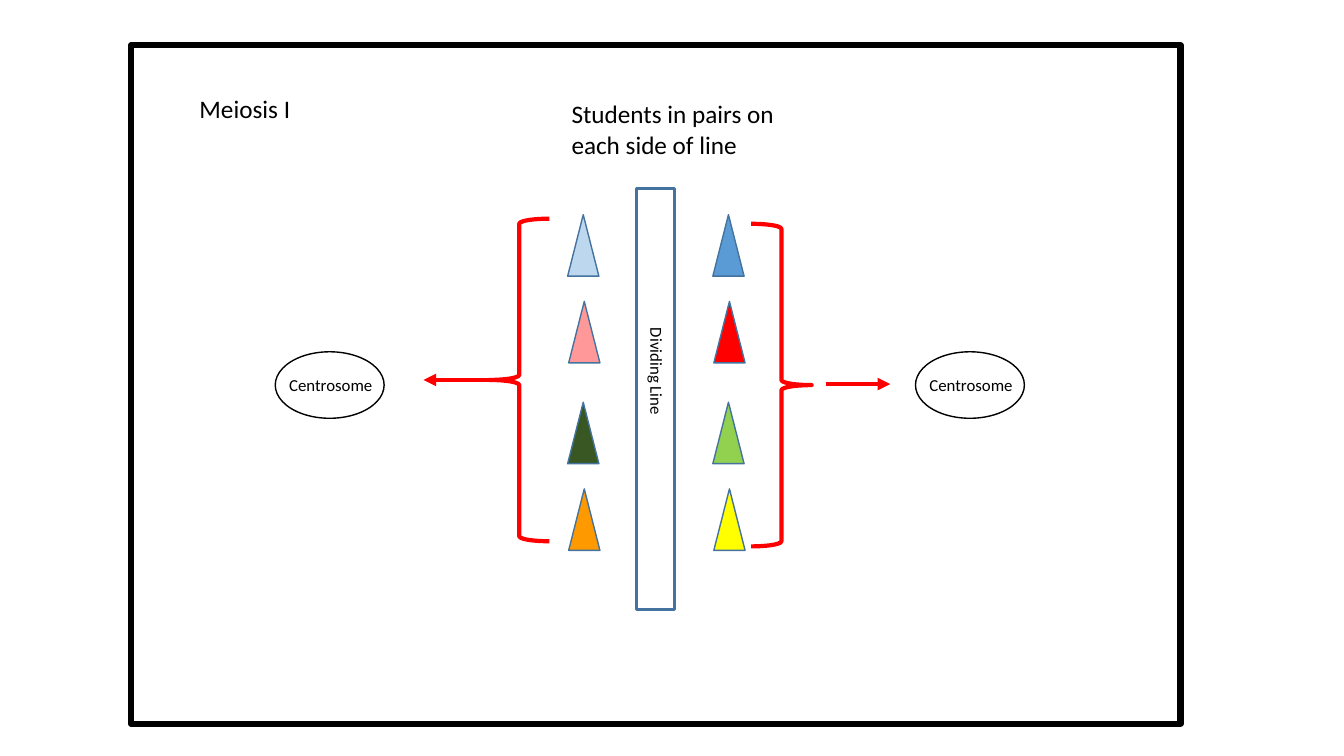
from lxml import etree
from pptx import Presentation
from pptx.dml.color import RGBColor
from pptx.enum import shapes, text
from pptx.oxml import ns
from pptx.util import Emu, Pt

PX = 9144  # 100 px to the inch
SLIDE_SIZE = (1333, 750)
BLACK, RED, STEEL = "000000", "FF0000", "43739E"

FRAME = (130, 45, 1041, 673)
DIVIDER = (631, 187, 38, 418)

# text, box, size in points, wraps, rotation
LABELS = [
    ("Dividing Line", (598, 354, 107, 30), 12, False, 90),
    ("Meiosis I", (188, 88, 111, 40), 18, False, 0),
    ("Students in pairs on each side of line", (557, 93, 241, 71), 18, True, 0),
]

CENTROSOME_LEFTS = (273, 908)
CENTROSOME_TOP = 349

# top, shift to the right, colours left and right of the line
STUDENT_PAIRS = [
    (213, 0, ("BDD7EE", "5B9BD5")),
    (299, 1, ("FF9999", "FF0000")),
    (399, 0, ("385723", "92D050")),
    (485, 1, ("FF9900", "FFFF00")),
]
STUDENT_LEFTS = (563, 707)
STUDENT_SIZE = (31, 61)

# brace box, rotation, arrow start and end x, arrow y
PULLS = [
    ((485, 217, 60, 320), 0, (484, 420), 377),
    ((745, 222, 60, 320), 180, (819, 883), 381),
]


def px(*lengths):
    return [Emu(length * PX) for length in lengths]


def color(hex_string):
    return RGBColor.from_string(hex_string)


def set_line(shape, line_color, width):
    shape.line.color.rgb = color(line_color)
    shape.line.width = Pt(width)


def add_shape(kind, box, line_color, width, fill=None, rotation=0):
    shape = slide.shapes.add_shape(kind, *px(*box))
    shape.shadow.inherit = False
    shape.rotation = rotation
    if fill:
        shape.fill.solid()
        shape.fill.fore_color.rgb = color(fill)
    else:
        shape.fill.background()
    set_line(shape, line_color, width)


def add_label(words, box, size, wraps=False, rotation=0):
    label = slide.shapes.add_textbox(*px(*box))
    label.rotation = rotation
    frame = label.text_frame
    frame.word_wrap = wraps
    frame.auto_size = text.MSO_AUTO_SIZE.SHAPE_TO_FIT_TEXT
    paragraph = frame.paragraphs[0]
    paragraph.text = words
    font_values = {"name": "Calibri", "size": Pt(size)}
    for name, value in font_values.items():
        setattr(paragraph.font, name, value)
    paragraph.font.color.rgb = color(BLACK)


def add_arrow(start_x, end_x, y):
    arrow = slide.shapes.add_connector(
        shapes.MSO_CONNECTOR.STRAIGHT, *px(start_x, y, end_x, y))
    set_line(arrow, RED, 3)
    etree.SubElement(arrow.line._get_or_add_ln(), ns.qn("a:tailEnd"), type="triangle")
    etree.SubElement(arrow._element.spPr, ns.qn("a:effectLst"))


presentation = Presentation()
presentation.slide_width, presentation.slide_height = px(*SLIDE_SIZE)
slide = presentation.slides.add_slide(presentation.slide_layouts[6])
kinds = shapes.MSO_SHAPE

add_shape(kinds.RECTANGLE, FRAME, BLACK, 4.5)
add_shape(kinds.RECTANGLE, DIVIDER, STEEL, 2.25)
for label_values in LABELS:
    add_label(*label_values)

for left in CENTROSOME_LEFTS:
    add_shape(kinds.OVAL, (left, CENTROSOME_TOP, 108, 66), BLACK, 1)
    add_label("Centrosome", (left + 4, CENTROSOME_TOP + 18, 104, 30), 12)

for top, shift, fills in STUDENT_PAIRS:
    for left, fill in zip(STUDENT_LEFTS, fills):
        add_shape(kinds.ISOSCELES_TRIANGLE, (left + shift, top, *STUDENT_SIZE),
                  STEEL, 1, fill)

for brace_box, rotation, arrow_ends, arrow_y in PULLS:
    add_shape(kinds.LEFT_BRACE, brace_box, RED, 3, rotation=rotation)
    add_arrow(*arrow_ends, arrow_y)

presentation.save("out.pptx")
